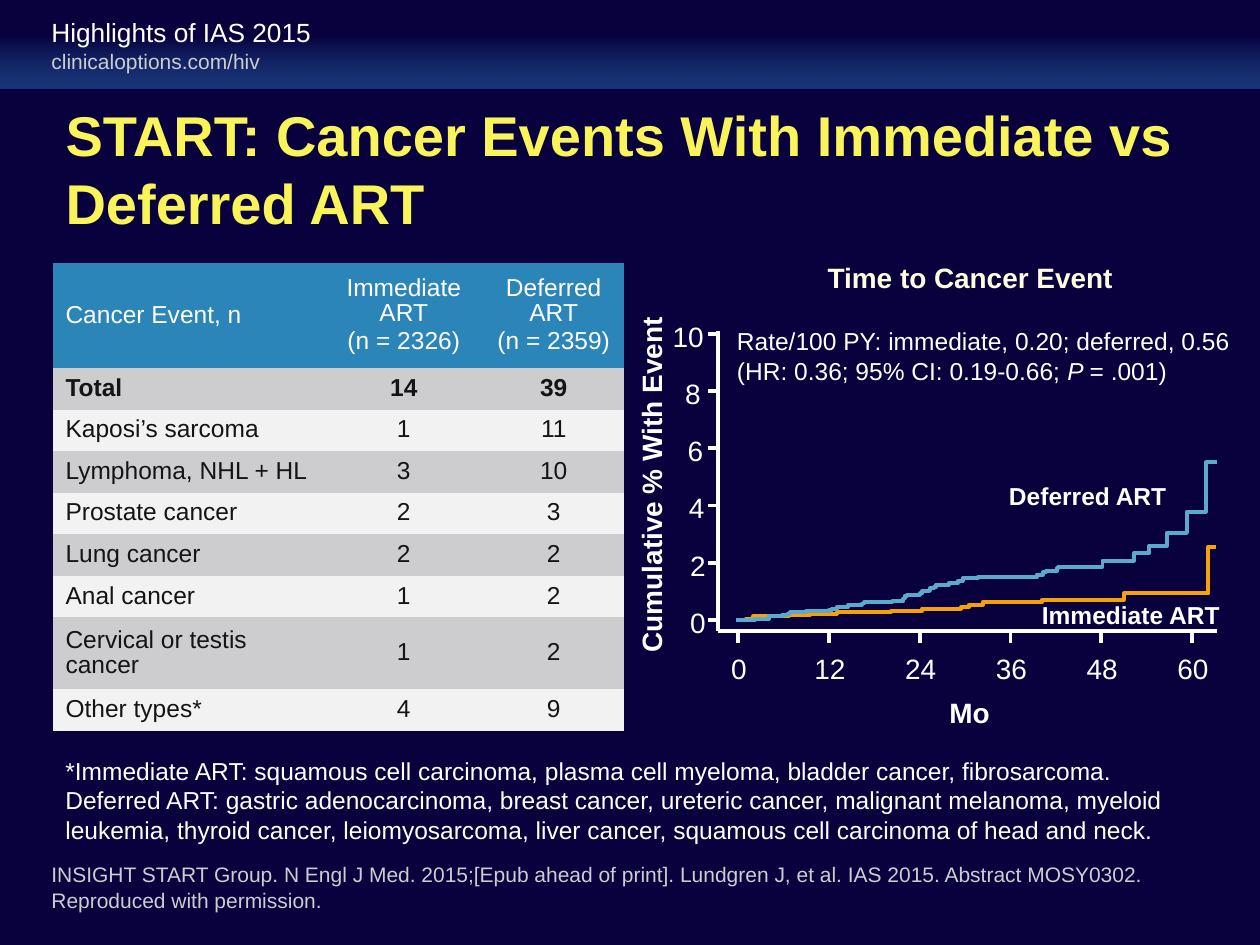
from dataclasses import dataclass
from typing import NamedTuple

from lxml.etree import SubElement
from pptx import Presentation
from pptx.dml.color import RGBColor
from pptx.enum.shapes import MSO_CONNECTOR, MSO_SHAPE
from pptx.enum.text import MSO_ANCHOR, MSO_AUTO_SIZE, PP_ALIGN
from pptx.oxml.ns import qn
from pptx.util import Emu, Inches, Pt


@dataclass(frozen=True)
class Theme:
    font: str = "Arial"
    navy: str = "09003E"
    band: str = "225A9E"
    white: str = "FFFFFF"
    grey: str = "CDCDCF"
    pale: str = "F2F2F2"
    ink: str = "141415"
    yellow: str = "F8F45A"
    cream: str = "FEFDDE"
    header: str = "2B85B8"
    immediate: str = "F6A108"
    deferred: str = "5AAACE"
    title: int = 32
    axis: int = 16
    banner: int = 15
    body: int = 14
    small: int = 12
    stroke: float = 2.25


class Area(NamedTuple):
    column: float
    row: float
    columns: float
    rows: float


class Step(NamedTuple):
    column: float
    row: float


class Tick(NamedTuple):
    label: str
    left: float


THEME = Theme()
COLUMNS, ROWS = 100, 75
WIDTH, HEIGHT = Inches(10), Inches(7.5)

# Axes of the plot, in grid units
AXIS_LEFT, AXIS_RIGHT, AXIS_TOP, AXIS_BOTTOM = 57, 96.6, 26.3, 50.1
FIRST_VALUE_ROW, VALUE_GAP = 26.5, 4.54
FIRST_MONTH_COLUMN, MONTH_GAP = 58.6, 7.2
VALUE_TICKS = [Tick("10", 52.4), Tick("8", 53.4), Tick("6", 53.6),
               Tick("4", 53.7), Tick("2", 53.8), Tick("0", 53.8)]
MONTHS = range(0, 61, 12)

# Curves run from the right: at each column the line drops to the row
IMMEDIATE_START, IMMEDIATE_END = Step(96.5, 43.4), 58.5
IMMEDIATE = [Step(*pair) for pair in (
    (95.9, 47.1), (89.2, 47.6), (82.7, 47.8), (78, 48), (76.9, 48.2),
    (76.3, 48.3), (73.2, 48.5), (70.7, 48.6), (66.4, 48.7), (64.3, 48.8),
    (62.6, 48.9), (59.8, 49.1), (59.2, 49.2))]
DEFERRED_START, DEFERRED_END = Step(96.6, 36.7), 58.4
DEFERRED = [Step(*pair) for pair in (
    (95.7, 40.6), (94.2, 42.3), (92.6, 43.3), (91.2, 43.9), (90, 44.5),
    (87.5, 45), (84, 45.1), (83.9, 45.3), (83, 45.4), (82.8, 45.6),
    (82.3, 45.8), (77.6, 45.9), (76.4, 46.1), (76, 46.3), (75.3, 46.4),
    (74.3, 46.6), (74.1, 46.7), (73.8, 46.9), (73.2, 47.1), (73, 47.2),
    (72, 47.3), (71.8, 47.5), (71.7, 47.7), (70.8, 47.8), (68.6, 47.9),
    (68.4, 48), (67.3, 48.2), (66.4, 48.3), (66, 48.4), (65.8, 48.5),
    (64, 48.6), (62.7, 48.7), (62.5, 48.8), (62.1, 48.9), (61, 49.1),
    (59.9, 49.2))]

TABLE_AREA = Area(4.2, 20.9, 45.2, 37.3)
TABLE_COLUMNS = (21.5, 12.7, 11.1)
TABLE_ROWS = (8.3, *[3.3] * 6, 5.7, 3.3)
EVENTS = [
    ("Cancer Event, n", "Immediate ART\n(n = 2326)", "Deferred ART\n(n = 2359)"),
    ("Total", "14", "39"),
    ("Kaposi’s sarcoma", "1", "11"),
    ("Lymphoma, NHL + HL", "3", "10"),
    ("Prostate cancer", "2", "3"),
    ("Lung cancer", "2", "2"),
    ("Anal cancer", "1", "2"),
    ("Cervical or testis cancer", "1", "2"),
    ("Other types*", "4", "9"),
]


def across(columns: float) -> Emu:
    return Emu(round(WIDTH * columns / COLUMNS))


def down(rows: float) -> Emu:
    return Emu(round(HEIGHT * rows / ROWS))


def place(area: Area) -> tuple:
    return across(area.column), down(area.row), across(area.columns), down(area.rows)


def write(frame, text: str, *, size: int = THEME.axis, color: str = THEME.white,
          bold: bool = False, align=PP_ALIGN.LEFT, anchor=MSO_ANCHOR.TOP,
          before: float = 0, after: float = 0, spacing: float = None,
          italic: str = None) -> None:
    """Fill a text frame, one paragraph a line; italic names the slanted part."""
    frame.vertical_anchor = anchor
    for index, line in enumerate(text.split("\n")):
        para = frame.add_paragraph() if index else frame.paragraphs[0]
        para.alignment = align
        para.space_before, para.space_after = Pt(before), Pt(after)
        if spacing:
            para.line_spacing = spacing
        head, slanted, tail = line.partition(italic) if italic else (line, "", "")
        for part in filter(None, (head, slanted, tail)):
            span = para.add_run()
            span.text = part
            font = span.font
            font.name, font.size, font.bold = THEME.font, Pt(size), bold
            font.italic = part == slanted
            font.color.rgb = RGBColor.from_string(color)


def add_text(page, area: Area, text: str, *, wrap: bool = False,
             grow: bool = True, turn: float = 0, **style):
    box = page.shapes.add_textbox(*place(area))
    box.rotation = turn
    write(box.text_frame, text, **style)
    box.text_frame.word_wrap = wrap
    box.text_frame.auto_size = (MSO_AUTO_SIZE.SHAPE_TO_FIT_TEXT if grow
                                else MSO_AUTO_SIZE.NONE)


def add_line(page, start: Step, end: Step) -> None:
    line = page.shapes.add_connector(MSO_CONNECTOR.STRAIGHT, across(start.column),
                                     down(start.row), across(end.column), down(end.row))
    line.line.color.rgb = RGBColor.from_string(THEME.white)
    line.line.width = Pt(THEME.stroke)
    SubElement(line._element.spPr, qn("a:effectLst"))


def add_curve(page, start: Step, steps: list[Step], end: float, color: str) -> None:
    points, row = [], start.row
    for step in steps:
        points += [(across(step.column), down(row)), (across(step.column), down(step.row))]
        row = step.row
    points.append((across(end), down(row)))
    builder = page.shapes.build_freeform(across(start.column), down(start.row))
    builder.add_line_segments(points, close=False)
    curve = builder.convert_to_shape()
    curve.shadow.inherit = False
    curve.fill.background()
    curve.line.color.rgb = RGBColor.from_string(color)
    curve.line.width = Pt(THEME.stroke)


def add_banner(page) -> None:
    banner = page.shapes.add_shape(MSO_SHAPE.RECTANGLE, *place(Area(0, 0, COLUMNS, 7)))
    banner.shadow.inherit = False
    banner.line.fill.background()
    banner.fill.gradient()
    banner.fill.gradient_angle = 90
    for stop, color, position in zip(banner.fill.gradient_stops,
                                     (THEME.band, THEME.navy), (0, 0.6)):
        stop.color.rgb = RGBColor.from_string(color)
        stop.position = position
    first_color = next(banner._element.iter(qn("a:srgbClr")))
    SubElement(first_color, qn("a:alpha")).set("val", "60000")
    add_text(page, Area(3.1, 3.4, 18.7, 3), "clinicaloptions.com/hiv",
             size=THEME.small, color=THEME.grey)
    add_text(page, Area(3.1, 0.8, 78.4, 3.5), "Highlights of IAS 2015",
             wrap=True, size=THEME.banner)


def add_title(page) -> None:
    title = page.shapes.title
    title.left, title.top, title.width, title.height = place(Area(4.2, 7.3, 92.6, 12.1))
    write(title.text_frame, "START: Cancer Events With Immediate vs Deferred ART",
          size=THEME.title, color=THEME.yellow, bold=True, anchor=MSO_ANCHOR.MIDDLE)
    title.text_frame.auto_size = MSO_AUTO_SIZE.NONE


def add_events(page) -> None:
    table = page.shapes.add_table(len(EVENTS), len(TABLE_COLUMNS), *place(TABLE_AREA)).table
    # Plain style without borders
    style = next(table._tbl.iter(qn("a:tableStyleId")))
    style.text = "{2D5ABB26-0587-4C30-8999-92F81FD0307C}"
    for column, width in zip(table.columns, TABLE_COLUMNS):
        column.width = across(width)
    for number, (row, height, texts) in enumerate(zip(table.rows, TABLE_ROWS, EVENTS)):
        row.height = down(height)
        fill = (THEME.grey if number % 2 else THEME.pale) if number else THEME.header
        for index, (cell, text) in enumerate(zip(row.cells, texts)):
            cell.fill.solid()
            cell.fill.fore_color.rgb = RGBColor.from_string(fill)
            write(cell.text_frame, text, size=THEME.body, bold=number == 1,
                  color=THEME.ink if number else THEME.white, before=1, after=1,
                  spacing=0.9, align=PP_ALIGN.CENTER if index else PP_ALIGN.LEFT)
            cell.vertical_anchor = MSO_ANCHOR.MIDDLE


def add_plot(page) -> None:
    add_text(page, Area(54.9, 20.5, 44.2, 3.7), "Time to Cancer Event", wrap=True,
             grow=False, color=THEME.cream, bold=True, align=PP_ALIGN.CENTER,
             spacing=0.9, before=0, after=7)
    # Axes, ticks and their labels
    corner = Step(AXIS_LEFT, AXIS_BOTTOM)
    add_line(page, Step(AXIS_LEFT, AXIS_TOP), corner)
    add_line(page, corner, Step(AXIS_RIGHT, AXIS_BOTTOM))
    for index, tick in enumerate(VALUE_TICKS):
        row = FIRST_VALUE_ROW + index * VALUE_GAP
        add_line(page, Step(AXIS_LEFT - 0.8, row), Step(AXIS_LEFT - 0.1, row))
        width = 4.5 if len(tick.label) > 1 else 3.3
        add_text(page, Area(tick.left, row - 1.65, width, 3.7), tick.label)
    for index, month in enumerate(MONTHS):
        column = FIRST_MONTH_COLUMN + index * MONTH_GAP
        add_line(page, Step(column, AXIS_BOTTOM), Step(column, AXIS_BOTTOM + 0.9))
        width = 4.5 if month > 9 else 3.3
        add_text(page, Area(column + 0.1 - width / 2, 51.2, width, 3.7), str(month))
    add_text(page, Area(37.2, 36.4, 29, 3.7), "Cumulative % With Event", turn=270, bold=True)
    add_text(page, Area(74.3, 54.7, 5.3, 3.7), "Mo", bold=True, align=PP_ALIGN.CENTER)
    # Curves and their names
    add_curve(page, IMMEDIATE_START, IMMEDIATE, IMMEDIATE_END, THEME.immediate)
    add_curve(page, DEFERRED_START, DEFERRED, DEFERRED_END, THEME.deferred)
    add_text(page, Area(79.1, 37.7, 14.6, 3.4), "Deferred ART", size=THEME.body, bold=True)
    add_text(page, Area(81.7, 47.1, 16.2, 3.4), "Immediate ART", size=THEME.body, bold=True)
    add_text(page, Area(57.5, 25.4, 41.8, 5.7),
             "Rate/100 PY: immediate, 0.20; deferred, 0.56\n"
             "(HR: 0.36; 95% CI: 0.19-0.66; P = .001)",
             wrap=True, size=THEME.body, italic="P ")


def add_notes_below(page) -> None:
    add_text(page, Area(4.2, 59.5, 95.1, 8.1),
             "*Immediate ART: squamous cell carcinoma, plasma cell myeloma, bladder cancer, "
             "fibrosarcoma.\nDeferred ART: gastric adenocarcinoma, breast cancer, ureteric "
             "cancer, malignant melanoma, myeloid leukemia, thyroid cancer, leiomyosarcoma, "
             "liver cancer, squamous cell carcinoma of head and neck.",
             wrap=True, size=THEME.body)
    add_text(page, Area(3.1, 67.8, 93.6, 5.1),
             "INSIGHT START Group. N Engl J Med. 2015;[Epub ahead of print]. Lundgren J, "
             "et al. IAS 2015. Abstract MOSY0302. Reproduced with permission.",
             wrap=True, size=THEME.small, color=THEME.grey, anchor=MSO_ANCHOR.BOTTOM)


def main() -> None:
    deck = Presentation()
    deck.slide_width, deck.slide_height = WIDTH, HEIGHT
    page = deck.slides.add_slide(deck.slide_layouts[5])
    page.background.fill.solid()
    page.background.fill.fore_color.rgb = RGBColor.from_string(THEME.navy)
    for draw in (add_banner, add_title, add_events, add_plot, add_notes_below):
        draw(page)
    deck.save("out.pptx")


if __name__ == "__main__":
    main()
